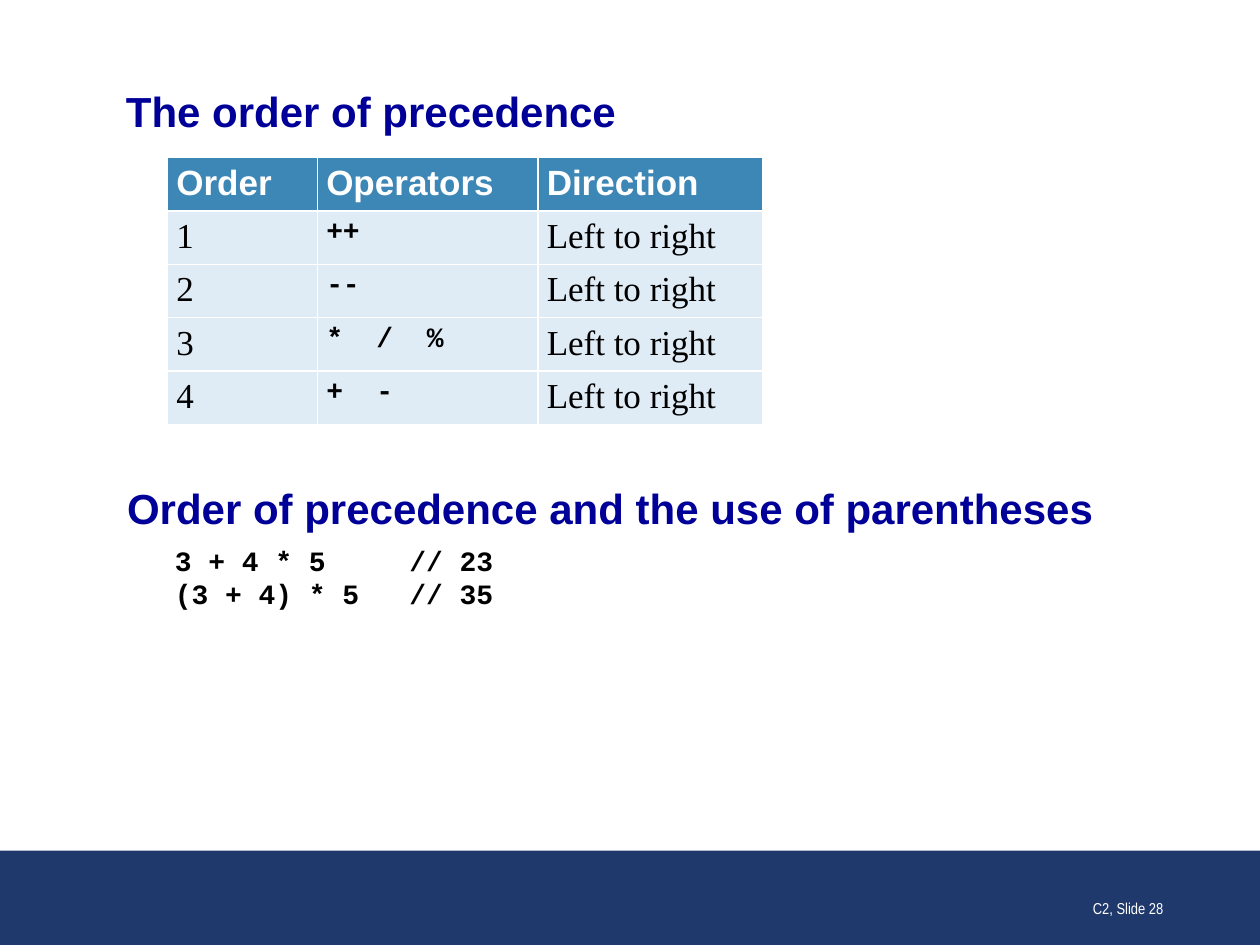
from pptx import Presentation
from pptx.dml.color import RGBColor
from pptx.enum.shapes import MSO_SHAPE
from pptx.enum.text import MSO_ANCHOR, PP_ALIGN
from pptx.util import Inches, Pt

RECTANGLE = MSO_SHAPE.RECTANGLE
TOP, MIDDLE, BOTTOM = MSO_ANCHOR.TOP, MSO_ANCHOR.MIDDLE, MSO_ANCHOR.BOTTOM
LEFT, RIGHT = PP_ALIGN.LEFT, PP_ALIGN.RIGHT

WHITE = RGBColor(0xFF, 0xFF, 0xFF)
BLACK = RGBColor(0x00, 0x00, 0x00)
HEADING_BLUE = RGBColor(0x00, 0x00, 0x99)
BAND_BLUE = RGBColor(0x20, 0x39, 0x6D)
HEADER_FILL = RGBColor(0x3D, 0x87, 0xB7)
ROW_FILL = RGBColor(0xDF, 0xEC, 0xF5)

HEADING = dict(font="Arial", size=24, color=HEADING_BLUE, bold=True)
TABLE_HEAD = dict(font="Arial", size=20, color=WHITE, bold=True)
TABLE_TEXT = dict(font="Times New Roman", size=20)
CODE = dict(font="Courier New", size=16, bold=True)

COLUMN_WIDTHS = (1.19, 1.75, 1.78)
HEADERS = ("Order", "Operators", "Direction")
OPERATORS = ("++", "--", "*  /  %", "+  -")
CODE_LINES = ("3 + 4 * 5     // 23", "(3 + 4) * 5   // 35")


def write(paragraph, text, font, size, color=BLACK, bold=False,
          align=LEFT, after=0, indent=0):
    """Put formatted text into a paragraph."""
    paragraph.text = text
    paragraph.alignment = align
    paragraph.space_after = Pt(after)
    if indent:
        paragraph._p.get_or_add_pPr().set("marL", str(Inches(indent)))
    paragraph.font.name = font
    paragraph.font.size = Pt(size)
    paragraph.font.bold = bold
    paragraph.font.color.rgb = color


def add_text_frame(slide, left, top, width, height, anchor=TOP):
    box = slide.shapes.add_textbox(
        Inches(left), Inches(top), Inches(width), Inches(height))
    frame = box.text_frame
    frame.word_wrap = True
    frame.vertical_anchor = anchor
    return frame


def add_title(slide, left, top, width, height):
    frame = add_text_frame(slide, left, top, width, height, MIDDLE)
    frame.margin_left = frame.margin_right = 0
    frame.margin_top = frame.margin_bottom = 0
    write(frame.paragraphs[0], "The order of precedence", **HEADING)


def add_precedence_table(slide, left, top, width, height):
    rows = [HEADERS] + [
        (str(order), operators, "Left to right")
        for order, operators in enumerate(OPERATORS, start=1)]
    table = slide.shapes.add_table(
        len(rows), len(HEADERS), Inches(left), Inches(top),
        Inches(width), Inches(height)).table
    for column, column_width in zip(table.columns, COLUMN_WIDTHS):
        column.width = Inches(column_width)

    body_formats = (TABLE_TEXT, CODE, TABLE_TEXT)
    for row_index, row in enumerate(rows):
        is_header = row_index == 0
        for column_index, text in enumerate(row):
            cell = table.cell(row_index, column_index)
            cell.margin_left = cell.margin_right = Inches(0.07)
            cell.margin_top, cell.margin_bottom = Inches(0.05), Inches(0.04)
            cell.fill.solid()
            cell.fill.fore_color.rgb = HEADER_FILL if is_header else ROW_FILL
            text_format = TABLE_HEAD if is_header else body_formats[column_index]
            write(cell.text_frame.paragraphs[0], text, **text_format)


def add_parentheses_example(slide, left, top, width, height):
    frame = add_text_frame(slide, left, top, width, height)
    write(frame.paragraphs[0],
          "Order of precedence and the use of parentheses", after=6, **HEADING)
    for line in CODE_LINES:
        write(frame.add_paragraph(), line, indent=0.38, **CODE)


def add_footer(slide, left, top, width, height):
    # Band across the bottom
    band = slide.shapes.add_shape(
        RECTANGLE, Inches(left), Inches(top), Inches(width), Inches(height))
    band.shadow.inherit = False
    band.fill.solid()
    band.fill.fore_color.rgb = BAND_BLUE
    band.line.fill.background()

    # Slide number
    frame = add_text_frame(slide, left + 7.25, top + 0.08, 2.08, 0.5, BOTTOM)
    write(frame.paragraphs[0], "C2, Slide 28", font="Arial Narrow", size=9,
          color=WHITE, align=RIGHT)


def main():
    presentation = Presentation()
    presentation.slide_width = Inches(10)
    presentation.slide_height = Inches(7.5)
    slide = presentation.slides.add_slide(presentation.slide_layouts[6])

    add_footer(slide, 0, 6.75, 10, 0.75)
    add_title(slide, 1, 0.68, 8, 0.4)
    add_precedence_table(slide, 1.33, 1.25, sum(COLUMN_WIDTHS), 2.04)
    add_parentheses_example(slide, 0.91, 3.78, 8.08, 2.42)

    presentation.save("out.pptx")


if __name__ == "__main__":
    main()
